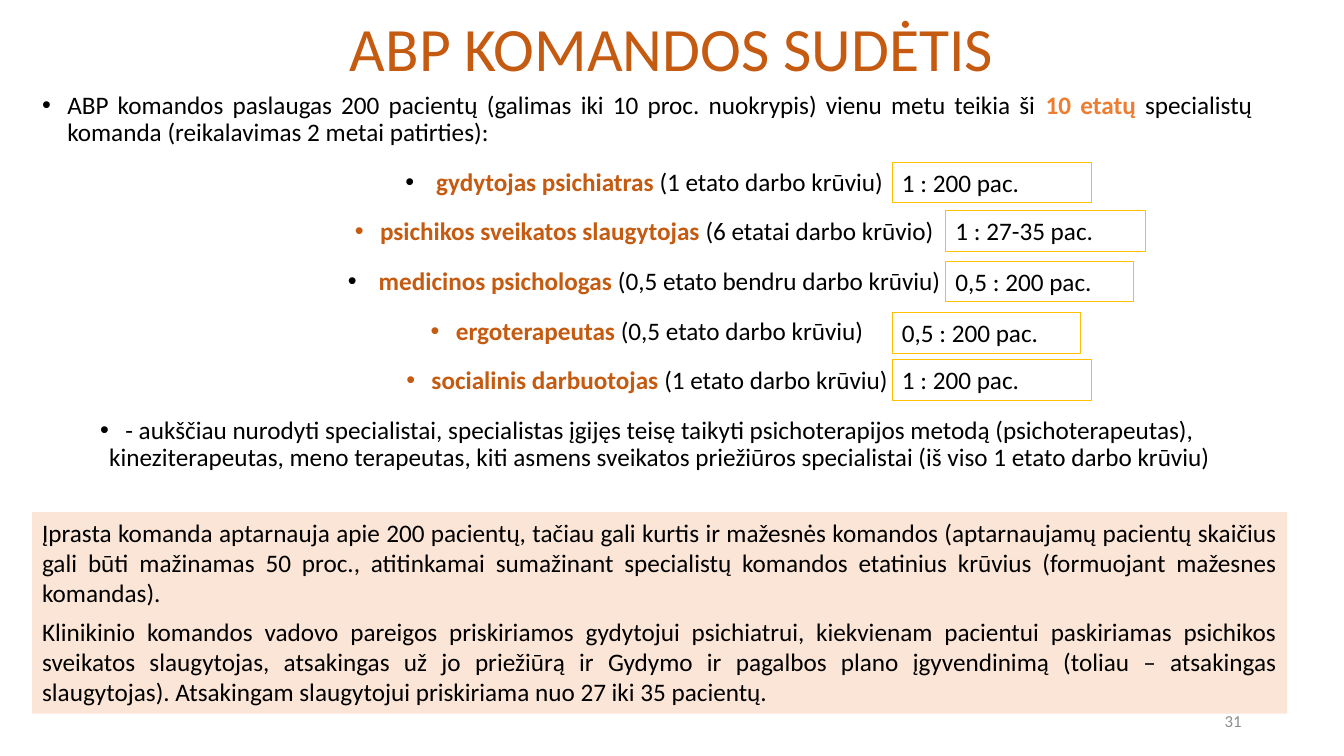
from lxml import etree
from pptx import Presentation
from pptx import util as u
from pptx.dml.color import RGBColor
from pptx.enum import shapes, text
from pptx.oxml.ns import qn

BLACK = RGBColor(0, 0, 0)
RUST = RGBColor(0xC5, 0x5A, 0x11)
ORANGE = RGBColor(0xED, 0x7D, 0x31)
GOLD = RGBColor(0xFF, 0xC0, 0x00)
PEACH = RGBColor(0xFB, 0xE5, 0xD6)
GREY = RGBColor(0x8C, 0x8C, 0x8C)

LEFT = text.PP_ALIGN.LEFT
CENTER = text.PP_ALIGN.CENTER
RIGHT = text.PP_ALIGN.RIGHT
JUSTIFY = text.PP_ALIGN.JUSTIFY

INTRO = [
    ("ABP komandos paslaugas 200 pacientų (galimas iki 10 proc. nuokrypis) vienu metu teikia ši ", BLACK, False),
    ("10 etatų ", ORANGE, True),
    ("specialistų komanda (reikalavimas 2 metai patirties):", BLACK, False),
]
SPECIALISTS = [
    (" gydytojas psichiatras ", "(1 etato darbo krūviu) ", BLACK),
    ("psichikos sveikatos slaugytojas ", "(6 etatai darbo krūvio) ", RUST),
    (" medicinos psichologas ", "(0,5 etato bendru darbo krūviu) ", BLACK),
    ("ergoterapeutas", " (0,5 etato darbo krūviu)", RUST),
    ("socialinis darbuotojas ", "(1 etato darbo krūviu)", RUST),
]
OTHERS = (
    "- aukščiau nurodyti specialistai, specialistas įgijęs teisę taikyti psichoterapijos metodą "
    "(psichoterapeutas), kineziterapeutas, meno terapeutas, kiti asmens sveikatos priežiūros "
    "specialistai (iš viso 1 etato darbo krūviu)"
)
RATIOS = [
    ("1 : 200 pac.", 637.2, 115.9, 142.6),
    ("1 : 27-35 pac.", 675.4, 150.5, 142.6),
    ("0,5 : 200 pac.", 675.4, 186.5, 134.6),
    ("0,5 : 200 pac.", 637.2, 223.2, 134.6),
    ("1 : 200 pac.", 637.2, 257, 142.6),
]
NOTES = [
    "Įprasta komanda aptarnauja apie 200 pacientų, tačiau gali kurtis ir mažesnės komandos "
    "(aptarnaujamų pacientų skaičius gali būti mažinamas 50 proc., atitinkamai sumažinant "
    "specialistų komandos etatinius krūvius (formuojant mažesnes komandas). ",
    "Klinikinio komandos vadovo pareigos priskiriamos gydytojui psichiatrui, kiekvienam pacientui "
    "paskiriamas psichikos sveikatos slaugytojas, atsakingas už jo priežiūrą ir Gydymo ir pagalbos "
    "plano įgyvendinimą (toliau – atsakingas slaugytojas). Atsakingam slaugytojui priskiriama "
    "nuo 27 iki 35 pacientų.",
]


def apply(target, **formats):
    """Set each given attribute on the target."""
    for name, value in formats.items():
        setattr(target, name, value)


def write(para, spans, size=18, **formats):
    """Fill a paragraph with (words, colour, bold) spans."""
    apply(para, **formats)
    for words, colour, bold in spans:
        span = para.add_run()
        span.text = words
        apply(span.font, name="Calibri", size=u.Pt(size), bold=bold)
        span.font.color.rgb = colour


def add_bullet(para, colour):
    """Give a paragraph a hanging round bullet."""
    properties = para._p.get_or_add_pPr()
    properties.set("marL", str(u.Pt(18)))
    properties.set("indent", str(-u.Pt(18)))
    bullet_colour = etree.SubElement(properties, qn("a:buClr"))
    etree.SubElement(bullet_colour, qn("a:srgbClr"), val=str(colour))
    etree.SubElement(properties, qn("a:buFont"), typeface="Arial")
    etree.SubElement(properties, qn("a:buChar"), char="•")


def next_para(frame, index):
    """Return the first paragraph of a frame, or a new one after it."""
    return frame.add_paragraph() if index else frame.paragraphs[0]


def add_title(page, words):
    """Place and format the title placeholder."""
    title = page.shapes.title
    apply(title, left=u.Pt(66), top=u.Pt(0), width=u.Pt(828), height=u.Pt(74.2))
    title.text_frame.vertical_anchor = text.MSO_ANCHOR.MIDDLE
    write(title.text_frame.paragraphs[0], [(words, RUST, False)], 44,
          alignment=CENTER, line_spacing=0.9)


def add_text(page, left, top, width, height):
    """Add a wrapping text box and return its frame."""
    box = page.shapes.add_textbox(*map(u.Pt, (left, top, width, height)))
    box.text_frame.word_wrap = True
    return box.text_frame


def add_team(page):
    """Add the bulleted list of team members."""
    frame = add_text(page, 23, 62.6, 878.4, 288)
    items = [(INTRO, BLACK, JUSTIFY)]
    for role, load, colour in SPECIALISTS:
        items.append(([(role, RUST, True), (load, BLACK, False)], colour, CENTER))
    items.append(([(OTHERS, BLACK, False)], BLACK, CENTER))
    for index, (spans, colour, alignment) in enumerate(items):
        para = next_para(frame, index)
        add_bullet(para, colour)
        write(para, spans, alignment=alignment, line_spacing=0.9,
              space_before=u.Pt(10 if index else 0), space_after=u.Pt(6))


def add_panel(page, left, top, width, height, words, alignment, after=0, fill=None, line=None):
    """Add a rectangle with one paragraph for each text."""
    box = page.shapes.add_shape(shapes.MSO_SHAPE.RECTANGLE, *map(u.Pt, (left, top, width, height)))
    box.shadow.inherit = False
    if fill:
        box.fill.solid()
        box.fill.fore_color.rgb = fill
    else:
        box.fill.background()
    if line:
        box.line.color.rgb = line
        box.line.width = u.Pt(0.75)
    else:
        box.line.fill.background()
    apply(box.text_frame, word_wrap=True, vertical_anchor=text.MSO_ANCHOR.TOP)
    for index, passage in enumerate(words):
        write(next_para(box.text_frame, index), [(passage, BLACK, False)],
              alignment=alignment, space_after=u.Pt(after))


def add_number(page, words):
    """Add the page number."""
    frame = add_text(page, 678, 500.4, 216, 28.8)
    frame.vertical_anchor = text.MSO_ANCHOR.MIDDLE
    write(frame.paragraphs[0], [(words, GREY, False)], 12, alignment=RIGHT)


def main():
    """Build and save the slide."""
    deck = Presentation()
    apply(deck, slide_width=u.Pt(960), slide_height=u.Pt(540))
    page = deck.slides.add_slide(deck.slide_layouts[5])
    add_title(page, "ABP KOMANDOS SUDĖTIS")
    add_team(page)
    add_number(page, "31")
    for ratio, left, top, width in RATIOS:
        add_panel(page, left, top, width, 29, [ratio], LEFT, line=GOLD)
    add_panel(page, 23, 365.8, 896.4, 144, NOTES, JUSTIFY, after=6, fill=PEACH)
    deck.save("out.pptx")


if __name__ == "__main__":
    main()
